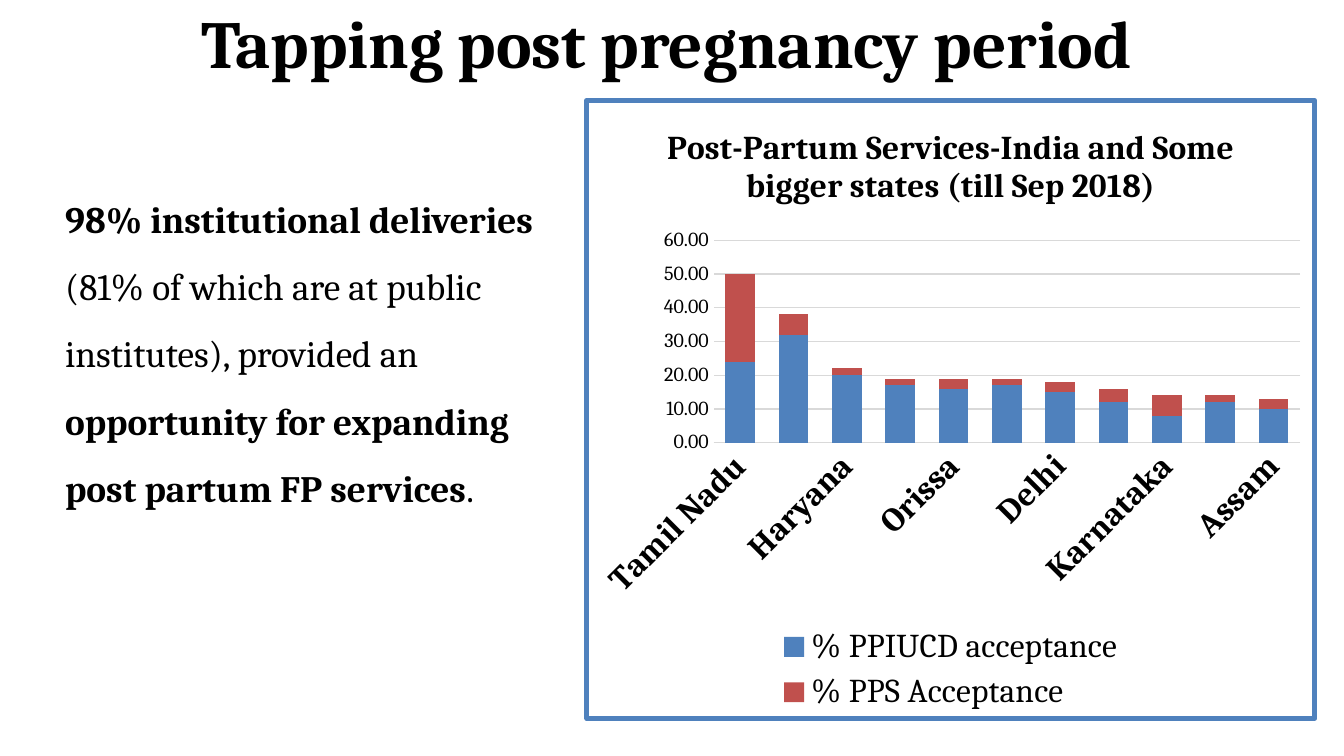
from dataclasses import dataclass

from lxml import etree
from pptx import Presentation
from pptx.chart.data import CategoryChartData
from pptx.dml.color import RGBColor
from pptx.enum.chart import XL_CHART_TYPE, XL_LEGEND_POSITION, XL_TICK_MARK
from pptx.enum.text import MSO_ANCHOR, MSO_AUTO_SIZE, PP_ALIGN
from pptx.oxml import parse_xml
from pptx.oxml.ns import nsdecls, qn
from pptx.util import Pt

STACKED = XL_CHART_TYPE.COLUMN_STACKED
BOTTOM = XL_LEGEND_POSITION.BOTTOM
NO_TICK = XL_TICK_MARK.NONE
MIDDLE = MSO_ANCHOR.MIDDLE
TOP = MSO_ANCHOR.TOP
NO_FIT = MSO_AUTO_SIZE.NONE
CENTER = PP_ALIGN.CENTER
LEFT = PP_ALIGN.LEFT
TITLE_ONLY = 5


@dataclass(frozen=True)
class Theme:
    """Colours, font and type sizes of the slide."""
    font: str = "Cambria"
    text: str = "000000"
    grid: str = "D9D9D9"
    border: str = "4F81BD"
    series: tuple = ("4F81BD", "C0504D")
    title_size: float = 40
    body_size: float = 22.2
    chart_size: float = 20
    value_size: float = 12


STATES = ["Tamil Nadu", "West Bengal", "Haryana", "MP", "Orissa", "Rajasthan",
          "Delhi", "India", "Karnataka", "Punjab", "Assam"]
ACCEPTANCE = {
    "% PPIUCD acceptance": [24, 32, 20, 17, 16, 17, 15, 12, 8, 12, 10],
    "% PPS Acceptance": [26, 6, 2, 2, 3, 2, 3, 4, 6, 2, 3],
}
MESSAGE = [
    ("98% institutional deliveries ", True),
    ("(81% of which are at public institutes), provided an ", False),
    ("opportunity for expanding post partum FP services", True),
    (".", False),
]


def format_font(font, theme, size, bold=False):
    """Apply the theme face and colour to a font."""
    font.name = theme.font
    font.size = Pt(size)
    font.bold = bold
    font.color.rgb = RGBColor.from_string(theme.text)


def write_text(frame, runs, theme, size, align=LEFT, anchor=TOP, line_spacing=1.0, space_before=0):
    """Fill a text frame with one paragraph of (text, bold) runs."""
    frame.word_wrap = True
    frame.auto_size = NO_FIT
    frame.vertical_anchor = anchor
    paragraph = frame.paragraphs[0]
    paragraph.alignment = align
    paragraph.line_spacing = line_spacing
    paragraph.space_before = Pt(space_before)
    for text, bold in runs:
        run = paragraph.add_run()
        run.text = text
        format_font(run.font, theme, size, bold)


class SlideBuilder:
    """Hold the theme and the current slide."""

    def __init__(self, slide, theme):
        """Keep the slide and its theme."""
        self.slide = slide
        self.theme = theme

    def title(self, text, left, top, width, height):
        """Place and format the title placeholder."""
        shape = self.slide.shapes.title
        shape.left, shape.top, shape.width, shape.height = map(Pt, (left, top, width, height))
        write_text(shape.text_frame, [(text, True)], self.theme, self.theme.title_size,
                   align=CENTER, anchor=MIDDLE)

    def body(self, runs, left, top, width, height):
        """Add the message beside the chart."""
        shape = self.slide.shapes.add_textbox(*map(Pt, (left, top, width, height)))
        write_text(shape.text_frame, runs, self.theme, self.theme.body_size,
                   line_spacing=1.5, space_before=4.4)

    def stacked_chart(self, title, categories, series, left, top, width, height):
        """Add a framed stacked column chart."""
        theme = self.theme
        data = CategoryChartData(number_format="0.00")
        data.categories = categories
        for name, values in series.items():
            data.add_series(name, values)
        box = map(Pt, (left, top, width, height))
        chart = self.slide.shapes.add_chart(STACKED, *box, data).chart
        format_font(chart.font, theme, theme.chart_size)
        chart.has_title = True
        write_text(chart.chart_title.text_frame, [(title, True)], theme, theme.chart_size,
                   align=CENTER)
        chart.chart_title.include_in_layout = False
        chart.has_legend = True
        chart.legend.position = BOTTOM
        chart.legend.include_in_layout = False
        format_font(chart.legend.font, theme, theme.chart_size)
        plot = chart.plots[0]
        plot.gap_width = 79
        plot.overlap = 100
        plot.vary_by_categories = False
        for column, color in zip(plot.series, theme.series):
            column.format.fill.solid()
            column.format.fill.fore_color.rgb = RGBColor.from_string(color)
        self.axes(chart)
        self.chart_border(chart)

    def axes(self, chart):
        """Format both axes and the gridlines."""
        theme = self.theme
        category, value = chart.category_axis, chart.value_axis
        for axis, size, bold in ((category, theme.chart_size, True), (value, theme.value_size, False)):
            axis.major_tick_mark = NO_TICK
            axis.minor_tick_mark = NO_TICK
            format_font(axis.tick_labels.font, theme, size, bold)
        category.tick_labels.font
        body = next(category._element.iter(qn("a:bodyPr")))
        body.set("rot", "-2700000")
        body.set("vert", "horz")
        value.minimum_scale = 0
        value.maximum_scale = 60
        value.major_unit = 10
        value.tick_labels.number_format = "0.00"
        value.tick_labels.number_format_is_linked = False
        value.format.line.fill.background()
        value.has_major_gridlines = True
        for line in (category.format.line, value.major_gridlines.format.line):
            line.width = Pt(0.75)
            line.color.rgb = RGBColor.from_string(theme.grid)

    def chart_border(self, chart):
        """Draw the frame around the chart area."""
        namespaces = nsdecls("c", "a")
        properties = parse_xml(f"<c:spPr {namespaces}><a:noFill/></c:spPr>")
        line = etree.SubElement(properties, qn("a:ln"), w=str(Pt(3)))
        fill = etree.SubElement(line, qn("a:solidFill"))
        etree.SubElement(fill, qn("a:srgbClr"), val=self.theme.border)
        chart._chartSpace.find(qn("c:chart")).addnext(properties)


def main():
    """Build and save the slide."""
    presentation = Presentation()
    presentation.slide_width = Pt(800)
    presentation.slide_height = Pt(450)
    slide = presentation.slides.add_slide(presentation.slide_layouts[TITLE_ONLY])
    builder = SlideBuilder(slide, Theme())
    builder.title("Tapping post pregnancy period", 9.4, 0, 774.7, 49)
    builder.body(MESSAGE, 31.7, 100, 294.5, 255)
    builder.stacked_chart("Post-Partum Services-India and Some bigger states (till Sep 2018)",
                          STATES, ACCEPTANCE, 347.8, 58.3, 436.3, 370.8)
    presentation.save("out.pptx")


if __name__ == "__main__":
    main()
